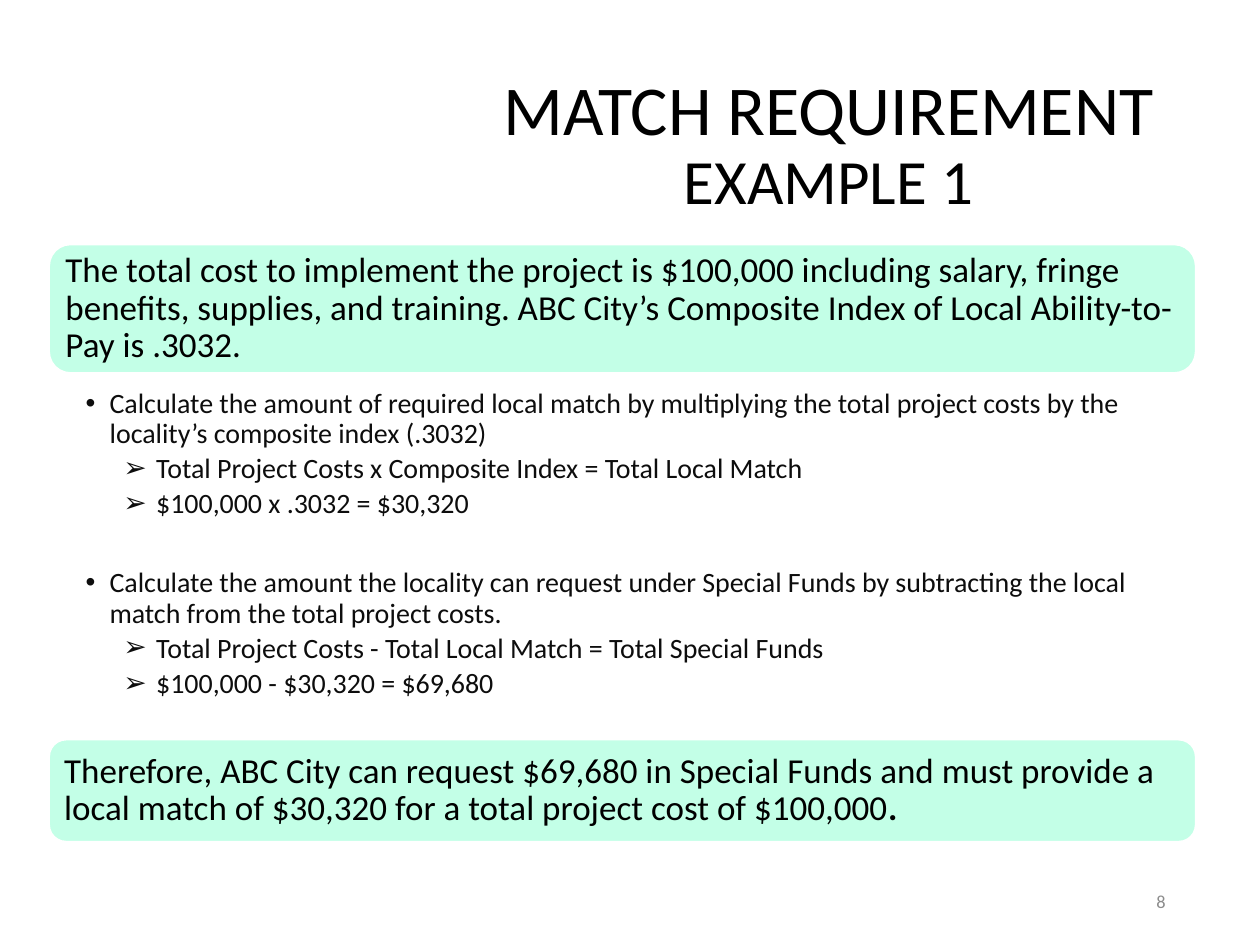
from dataclasses import dataclass

from lxml.etree import SubElement
from pptx import Presentation
from pptx.dml.color import RGBColor
from pptx.enum.shapes import MSO_SHAPE
from pptx.enum.text import MSO_ANCHOR, PP_ALIGN
from pptx.oxml.ns import qn
from pptx.util import Emu, Pt

EMU_PER_PX = 9144  # 100 px to the inch


def px(length: int) -> Emu:
    return Emu(length * EMU_PER_PX)


@dataclass(frozen=True)
class Theme:
    font: str = "Calibri"
    black: str = "000000"
    body: str = "0D0D0D"
    muted: str = "8C8C8C"
    panel: str = "C3FFE7"
    panel_line: str = "FFFFFF"
    title_size: float = 40
    subtitle_size: float = 36
    panel_size: float = 20
    body_size: float = 16
    number_size: float = 10.5
    line_spacing: float = 0.9
    space_after: float = 2.8
    group_gap: float = 25


@dataclass(frozen=True)
class Box:
    left: int
    top: int
    width: int
    height: int

    def lengths(self) -> tuple[Emu, ...]:
        return tuple(px(n) for n in (self.left, self.top, self.width, self.height))


@dataclass(frozen=True)
class Panel:
    box: Box
    text: str
    bold_end: str = ""


@dataclass(frozen=True)
class Bullet:
    symbol: str
    indent: int
    hanging: int


@dataclass(frozen=True)
class Step:
    instruction: str
    formulas: tuple[str, ...]


THEME = Theme()
STEP_BULLET = Bullet("•", 19, 19)
FORMULA_BULLET = Bullet("➢", 56, 26)

PANELS = (
    Panel(Box(39, 194, 910, 102),
          "The total cost to implement the project is $100,000 including salary, "
          "fringe benefits, supplies, and training. ABC City’s Composite Index of "
          "Local Ability-to-Pay is .3032."),
    Panel(Box(39, 587, 910, 81),
          "Therefore, ABC City can request $69,680 in Special Funds and must provide "
          "a local match of $30,320 for a total project cost of $100,000", "."),
)

STEPS = (
    Step("Calculate the amount of required local match by multiplying the total "
         "project costs by the locality’s composite index (.3032)",
         ("Total Project Costs x Composite Index = Total Local Match",
          "$100,000 x .3032 = $30,320")),
    Step("Calculate the amount the locality can request under Special Funds by "
         "subtracting the local match from the total project costs.",
         ("Total Project Costs - Total Local Match = Total Special Funds",
          "$100,000 - $30,320 = $69,680")),
)


def set_font(paragraph, size: float, color: str) -> None:
    paragraph.font.name = THEME.font
    paragraph.font.size = Pt(size)
    paragraph.font.color.rgb = RGBColor.from_string(color)


def set_insets(frame, left: int, top: int, right: int, bottom: int) -> None:
    frame.margin_left, frame.margin_top = px(left), px(top)
    frame.margin_right, frame.margin_bottom = px(right), px(bottom)


def add_text_frame(slide, box: Box, anchor: MSO_ANCHOR):
    frame = slide.shapes.add_textbox(*box.lengths()).text_frame
    frame.word_wrap = True
    frame.vertical_anchor = anchor
    return frame


def draw_title(slide) -> None:
    frame = add_text_frame(slide, Box(340, 46, 635, 141), MSO_ANCHOR.MIDDLE)
    paragraph = frame.paragraphs[0]
    paragraph.alignment = PP_ALIGN.CENTER
    paragraph.line_spacing = THEME.line_spacing
    paragraph.add_run().text = "MATCH REQUIREMENT "
    subtitle = paragraph.add_run()
    subtitle.text = "EXAMPLE 1"
    subtitle.font.size = Pt(THEME.subtitle_size)
    set_font(paragraph, THEME.title_size, THEME.black)


def draw_panel(slide, panel: Panel) -> None:
    shape = slide.shapes.add_shape(MSO_SHAPE.ROUNDED_RECTANGLE, *panel.box.lengths())
    shape.shadow.inherit = False
    shape.fill.solid()
    shape.fill.fore_color.rgb = RGBColor.from_string(THEME.panel)
    shape.line.color.rgb = RGBColor.from_string(THEME.panel_line)
    shape.line.width = Pt(1)
    frame = shape.text_frame
    frame.word_wrap = True
    frame.vertical_anchor = MSO_ANCHOR.MIDDLE
    set_insets(frame, 8, 8, 8, 8)
    paragraph = frame.paragraphs[0]
    paragraph.alignment = PP_ALIGN.LEFT
    paragraph.line_spacing = THEME.line_spacing
    paragraph.add_run().text = panel.text
    if panel.bold_end:
        ending = paragraph.add_run()
        ending.text = panel.bold_end
        ending.font.bold = True
    set_font(paragraph, THEME.panel_size, THEME.black)


def write_bullet(paragraph, text: str, bullet: Bullet, space_before: float = 0) -> None:
    paragraph.text = text
    paragraph.line_spacing = THEME.line_spacing
    paragraph.space_before = Pt(space_before)
    paragraph.space_after = Pt(THEME.space_after)
    properties = paragraph._p.get_or_add_pPr()
    properties.set("marL", str(px(bullet.indent)))
    properties.set("indent", str(-px(bullet.hanging)))
    SubElement(properties, qn("a:buFont"), typeface="Arial")
    SubElement(properties, qn("a:buChar"), char=bullet.symbol)
    set_font(paragraph, THEME.body_size, THEME.body)


def draw_steps(slide, box: Box, steps: tuple[Step, ...]) -> None:
    frame = add_text_frame(slide, box, MSO_ANCHOR.TOP)
    set_insets(frame, 29, 2, 12, 2)
    for index, step in enumerate(steps):
        paragraph = frame.add_paragraph() if index else frame.paragraphs[0]
        write_bullet(paragraph, step.instruction, STEP_BULLET,
                     THEME.group_gap if index else 0)
        for formula in step.formulas:
            write_bullet(frame.add_paragraph(), formula, FORMULA_BULLET)


def draw_slide_number(slide) -> None:
    frame = add_text_frame(slide, Box(719, 695, 216, 40), MSO_ANCHOR.MIDDLE)
    paragraph = frame.paragraphs[0]
    paragraph.text = "8"
    paragraph.alignment = PP_ALIGN.RIGHT
    set_font(paragraph, THEME.number_size, THEME.muted)


def main() -> None:
    presentation = Presentation()
    presentation.slide_width, presentation.slide_height = px(1000), px(750)
    slide = presentation.slides.add_slide(presentation.slide_layouts[6])

    # Heading
    draw_title(slide)

    # Scenario, calculation and conclusion
    scenario, conclusion = PANELS
    draw_panel(slide, scenario)
    draw_steps(slide, Box(39, 307, 910, 268), STEPS)
    draw_panel(slide, conclusion)

    # Footer
    draw_slide_number(slide)
    presentation.save("out.pptx")


if __name__ == "__main__":
    main()
